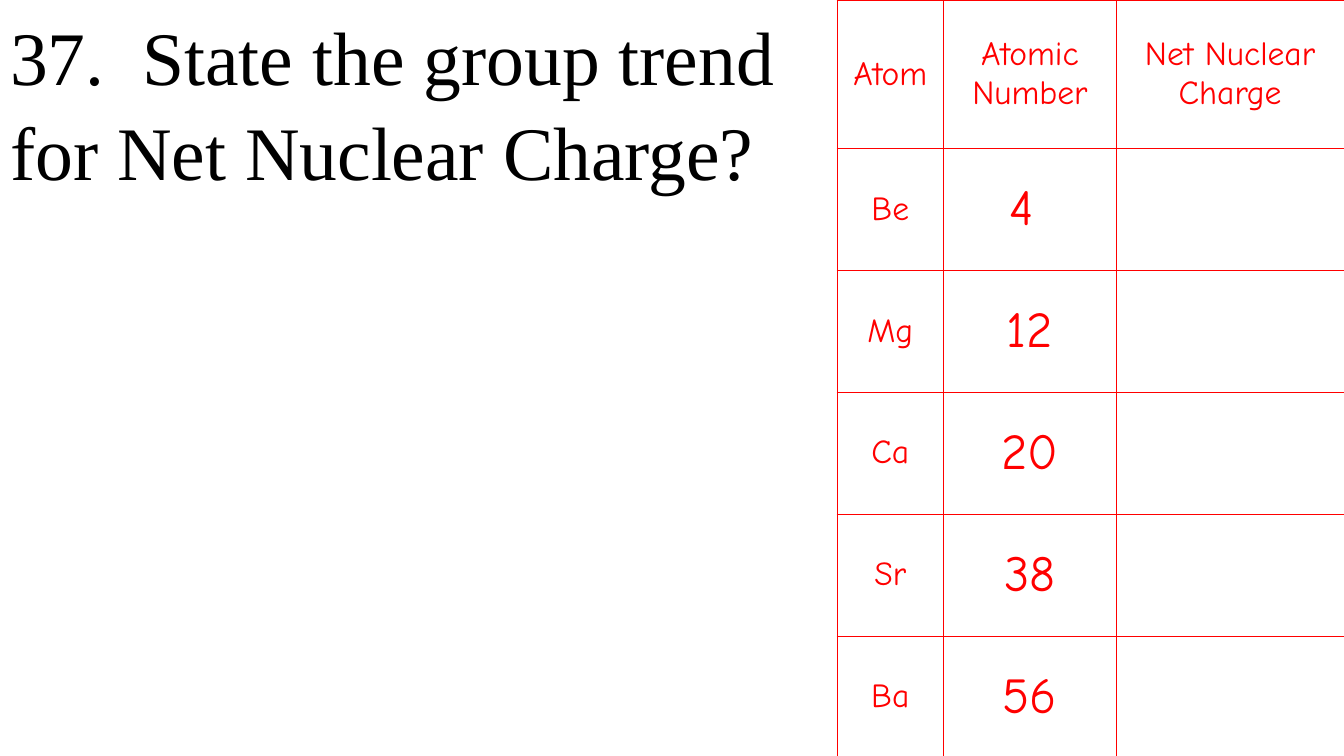
import pptx
import pptx.util
import pptx.dml.color
import pptx.enum.text
from lxml import etree
from pptx.util import Inches

TITLE = "37.  State the group trend for Net Nuclear Charge?"
HEADER = ["Atom", "Atomic Number", "Net Nuclear Charge"]
ATOMS = [("Be", "4 "), ("Mg", "12"), ("Ca", "20"), ("Sr", "38"), ("Ba", "56")]
COL_WIDTHS = [1.06, 1.71, 2.26]
HEADER_HEIGHT, ROW_HEIGHT = 1.47, 1.21
RED, WHITE, BLACK = "FF0000", "FFFFFF", "000000"
ALIGN = pptx.enum.text.PP_ALIGN
ANCHOR = pptx.enum.text.MSO_ANCHOR


def color(hex_value):
    return pptx.dml.color.RGBColor.from_string(hex_value)


def write(tf, text, size, font, hex_value, align):
    p = tf.paragraphs[0]
    p.alignment = align
    r = p.add_run()
    r.text = text
    r.font.size = pptx.util.Pt(size)
    r.font.name = font
    r.font.color.rgb = color(hex_value)
    return p


def add_borders(cell, hex_value, width):
    """Outline all four sides; borders must precede the fill in the XML."""
    ns = pptx.oxml.ns.qn
    tc_pr = cell._tc.get_or_add_tcPr()
    for i, side in enumerate(("a:lnL", "a:lnR", "a:lnT", "a:lnB")):
        ln = etree.Element(ns(side), w=str(pptx.util.Pt(width)))
        fill = etree.SubElement(ln, ns("a:solidFill"))
        etree.SubElement(fill, ns("a:srgbClr"), val=hex_value)
        tc_pr.insert(i, ln)


def add_title(s):
    sp = s.shapes.title
    sp.left, sp.top = Inches(0), Inches(0)
    sp.width, sp.height = Inches(8.16), Inches(3)
    tf = sp.text_frame
    tf.word_wrap = True
    tf.auto_size = pptx.enum.text.MSO_AUTO_SIZE.NONE
    tf.vertical_anchor = ANCHOR.TOP
    p = write(tf, TITLE, 54, "Times New Roman", BLACK, ALIGN.LEFT)
    p.line_spacing = 1.05


def add_atom_table(s):
    rows = [HEADER] + [[atom, number, ""] for atom, number in ATOMS]
    heights = [HEADER_HEIGHT] + [ROW_HEIGHT] * len(ATOMS)
    table = s.shapes.add_table(len(rows), len(HEADER), Inches(8.3), Inches(0),
                               Inches(sum(COL_WIDTHS)), Inches(sum(heights))).table
    for column, width in zip(table.columns, COL_WIDTHS):
        column.width = Inches(width)
    for i, (row, height) in enumerate(zip(rows, heights)):
        table.rows[i].height = Inches(height)
        for j, text in enumerate(row):
            cell = table.cell(i, j)
            cell.fill.solid()
            cell.fill.fore_color.rgb = color(WHITE)
            add_borders(cell, RED, 0.5)
            cell.vertical_anchor = ANCHOR.MIDDLE
            if text:
                size = 36 if i > 0 and j == 1 else 24
                write(cell.text_frame, text, size, "Comic Neue", RED, ALIGN.CENTER)


def main():
    prs = pptx.Presentation()
    prs.slide_width, prs.slide_height = Inches(13.33), Inches(7.5)
    s = prs.slides.add_slide(prs.slide_layouts[5])
    add_title(s)
    add_atom_table(s)
    prs.save("out.pptx")


if __name__ == "__main__":
    main()
